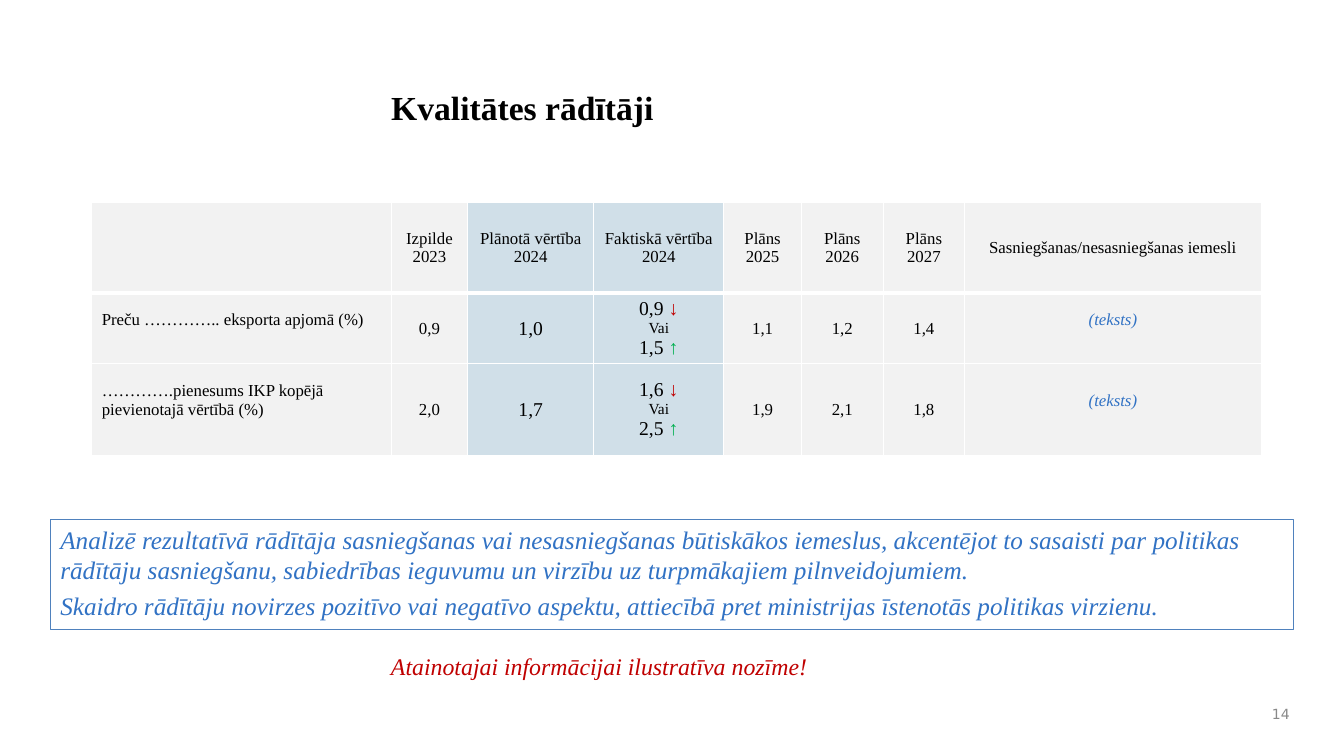
from dataclasses import dataclass

from lxml import etree
from pptx import Presentation
from pptx.dml.color import RGBColor
from pptx.enum.shapes import MSO_SHAPE
from pptx.enum.text import MSO_ANCHOR, PP_ALIGN
from pptx.oxml.ns import qn
from pptx.util import Inches, Pt

LEFT, CENTER, RIGHT = PP_ALIGN.LEFT, PP_ALIGN.CENTER, PP_ALIGN.RIGHT
TOP, MIDDLE = MSO_ANCHOR.TOP, MSO_ANCHOR.MIDDLE


@dataclass(frozen=True)
class Theme:
    serif: str = "Times New Roman"
    sans: str = "DejaVu Sans"
    black: str = "000000"
    white: str = "FFFFFF"
    blue: str = "3172C4"
    outline: str = "4F81BD"
    red: str = "C00000"
    green: str = "00B050"
    grey: str = "898989"
    cell: str = "F2F2F2"
    highlight: str = "D0DFE8"
    title_size: int = 24
    body_size: int = 18
    note_size: int = 17
    value_size: int = 14
    table_size: int = 12
    or_size: int = 11
    number_size: int = 10


THEME = Theme()

# Content
TITLE = "Kvalitātes rādītāji"
HEADERS = [
    [], ["Izpilde 2023"], ["Plānotā vērtība", "2024"], ["Faktiskā vērtība", "2024"],
    ["Plāns 2025"], ["Plāns 2026"], ["Plāns 2027"],
    ["Sasniegšanas/nesasniegšanas iemesli"],
]
# label, result, planned, (lower, higher), three plans, reasons
INDICATORS = [
    ("Preču ………….. eksporta apjomā (%)", "0,9", "1,0", ("0,9", "1,5"),
     "1,1", "1,2", "1,4", "(teksts)"),
    ("………….pienesums IKP kopējā pievienotajā vērtībā (%)", "2,0", "1,7", ("1,6", "2,5"),
     "1,9", "2,1", "1,8", "(teksts)"),
]
OR_WORD = "Vai"
GUIDANCE = [
    "Analizē rezultatīvā rādītāja sasniegšanas vai nesasniegšanas būtiskākos iemeslus, "
    "akcentējot to sasaisti par politikas rādītāju sasniegšanu, sabiedrības ieguvumu "
    "un virzību uz turpmākajiem pilnveidojumiem.",
    "Skaidro rādītāju novirzes pozitīvo vai negatīvo aspektu, attiecībā pret "
    "ministrijas īstenotās politikas virzienu.",
]
NOTE = "Atainotajai informācijai ilustratīva nozīme!"
PAGE_NUMBER = "14"

# Table layout
COLUMN_WIDTHS = [2.97, 0.76, 1.25, 1.29, 0.77, 0.81, 0.81, 2.94]
ROW_HEIGHTS = [0.9, 0.7, 0.91]
LABEL, PLANNED, ACTUAL, REASON = 0, 2, 3, 7
CELL_PADDING = 0.03
RAISED_PADDING = 0.21


def span(text, size, color=THEME.black, bold=False, italic=False, font=THEME.serif):
    return text, size, color, bold, italic, font


def write(frame, paragraphs, align=LEFT, gap=0):
    """Fill a text frame with paragraphs, each a list of spans."""
    frame.word_wrap = True
    for index, spans in enumerate(paragraphs):
        para = frame.add_paragraph() if index else frame.paragraphs[0]
        para.alignment = align
        para.space_before = Pt(gap if index else 0)
        for text, size, color, bold, italic, font in spans:
            run = para.add_run()
            run.text = text
            run.font.size, run.font.name = Pt(size), font
            run.font.bold, run.font.italic = bold, italic
            run.font.color.rgb = RGBColor.from_string(color)


def add_text(page, place, paragraphs, align=LEFT, anchor=TOP):
    box = page.shapes.add_textbox(*map(Inches, place))
    box.text_frame.vertical_anchor = anchor
    write(box.text_frame, paragraphs, align)


def set_borders(cell, bottom_width):
    """Draw white cell borders, placed ahead of the fill."""
    properties = cell._tc.get_or_add_tcPr()
    for index, side in enumerate(("lnL", "lnR", "lnT", "lnB")):
        line = etree.Element(qn(f"a:{side}"))
        line.set("w", str(Pt(bottom_width if side == "lnB" else 1)))
        fill = etree.SubElement(line, qn("a:solidFill"))
        etree.SubElement(fill, qn("a:srgbClr")).set("val", THEME.white)
        properties.insert(index, line)


def cell_paragraphs(column, value):
    if column == ACTUAL:
        lower, higher = value
        return [
            [span(f"{lower} ", THEME.value_size),
             span("↓", THEME.value_size, THEME.red, bold=True)],
            [span(OR_WORD, THEME.or_size)],
            [span(f"{higher} ", THEME.value_size),
             span("↑", THEME.value_size, THEME.green, bold=True)],
        ]
    if column == REASON:
        return [[span(value, THEME.table_size, THEME.blue, italic=True)]]
    size = THEME.value_size if column == PLANNED else THEME.table_size
    return [[span(value, size)]]


def add_indicator_table(page):
    rows = [[[[span(line, THEME.table_size)] for line in lines] for lines in HEADERS]]
    rows += [[cell_paragraphs(column, value) for column, value in enumerate(values)]
             for values in INDICATORS]
    table = page.shapes.add_table(
        len(rows), len(COLUMN_WIDTHS), Inches(0.91), Inches(2.01),
        Inches(sum(COLUMN_WIDTHS)), Inches(sum(ROW_HEIGHTS))).table
    for column, width in enumerate(COLUMN_WIDTHS):
        table.columns[column].width = Inches(width)
    for row, cells in enumerate(rows):
        table.rows[row].height = Inches(ROW_HEIGHTS[row])
        for column, paragraphs in enumerate(cells):
            cell = table.cell(row, column)
            highlighted = column in (PLANNED, ACTUAL)
            raised = row > 0 and column in (LABEL, REASON)
            cell.fill.solid()
            cell.fill.fore_color.rgb = RGBColor.from_string(
                THEME.highlight if highlighted else THEME.cell)
            set_borders(cell, 1 if row else 3)
            cell.vertical_anchor = MIDDLE
            cell.margin_top = Inches(CELL_PADDING)
            cell.margin_bottom = Inches(RAISED_PADDING if raised else CELL_PADDING)
            write(cell.text_frame, paragraphs, LEFT if column == LABEL else CENTER)


def main():
    deck = Presentation()
    deck.slide_width, deck.slide_height = Inches(13.33), Inches(7.5)
    page = deck.slides.add_slide(deck.slide_layouts.get_by_name("Title Only"))

    # Title
    title = page.shapes.title
    title.left, title.top = Inches(3.78), Inches(0.77)
    title.width, title.height = Inches(8.89), Inches(0.58)
    title.text_frame.vertical_anchor = MIDDLE
    write(title.text_frame, [[span(TITLE, THEME.title_size, bold=True)]])

    # Indicators
    add_indicator_table(page)

    # Guidance frame
    guidance = page.shapes.add_shape(
        MSO_SHAPE.RECTANGLE, Inches(0.5), Inches(5.15), Inches(12.33), Inches(1.1))
    guidance.shadow.inherit = False
    guidance.fill.background()
    guidance.line.color.rgb = RGBColor.from_string(THEME.outline)
    guidance.line.width = Pt(0.75)
    guidance.text_frame.vertical_anchor = TOP
    write(guidance.text_frame,
          [[span(text, THEME.body_size, THEME.blue, italic=True)] for text in GUIDANCE],
          gap=4)

    # Note and page number
    add_text(page, (3.78, 6.42, 5.87, 0.33),
             [[span(NOTE, THEME.note_size, THEME.red, italic=True)]])
    add_text(page, (12.26, 6.92, 0.63, 0.33),
             [[span(PAGE_NUMBER, THEME.number_size, THEME.grey, font=THEME.sans)]],
             RIGHT, MIDDLE)

    deck.save("out.pptx")


if __name__ == "__main__":
    main()
